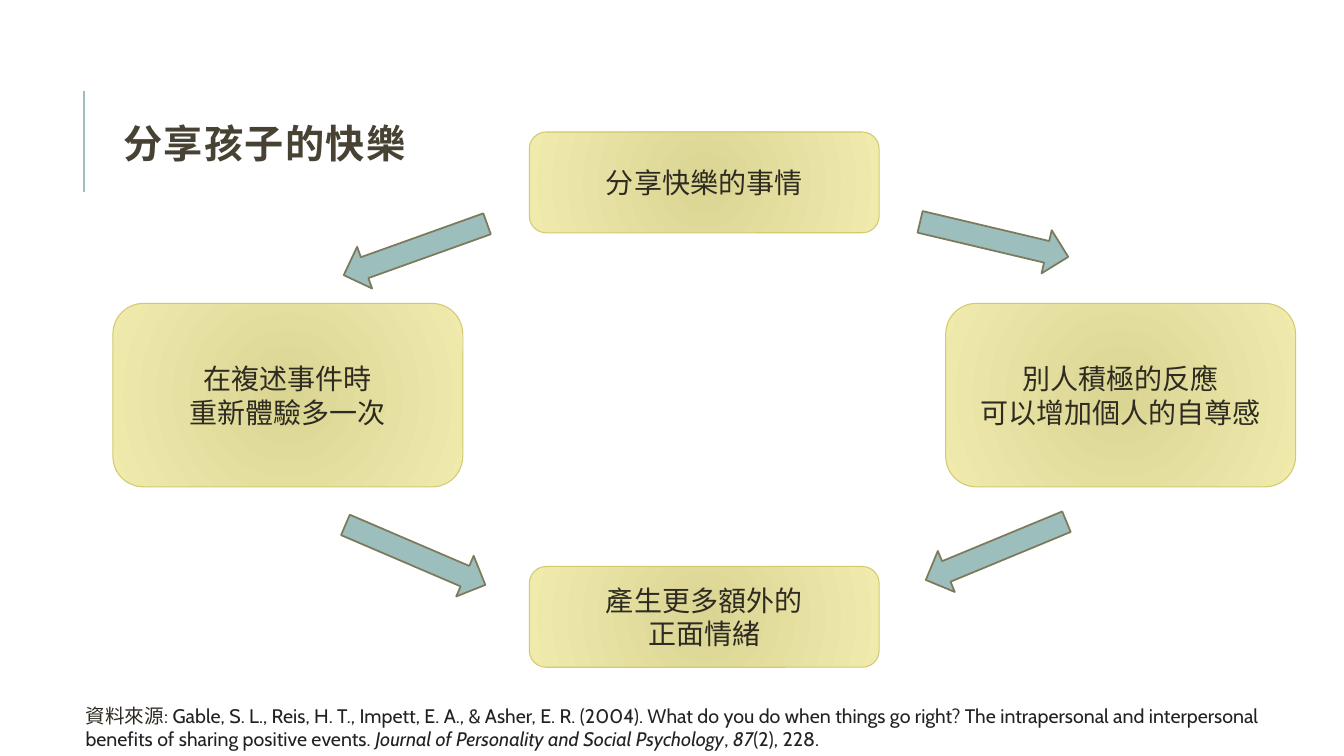
import pptx
import pptx.util
import pptx.dml.color
import pptx.enum.shapes
import pptx.enum.text
import pptx.oxml
import pptx.oxml.ns
import lxml.etree

Inches = pptx.util.Inches
Pt = pptx.util.Pt
MSO_SHAPE = pptx.enum.shapes.MSO_SHAPE
PP_ALIGN = pptx.enum.text.PP_ALIGN
MSO_ANCHOR = pptx.enum.text.MSO_ANCHOR
qn = pptx.oxml.ns.qn

COLORS = {
    "teal": "9CBEBD",
    "arrow_line": "7D7A5C",
    "title": "474233",
    "text": "2E2B21",
    "citation": "222222",
    "box_center": "DBD594",
    "box_edge": "F0EAAD",
    "box_line": "D2CB6C",
}


def rgb(name):
    return pptx.dml.color.RGBColor.from_string(COLORS[name])


def set_font(font, name, size, color):
    font.name = name
    font.size = Pt(size)
    font.color.rgb = rgb(color)


presentation = pptx.Presentation()
presentation.slide_width = Inches(13.33)
presentation.slide_height = Inches(7.5)
slide = presentation.slides.add_slide(presentation.slide_layouts[5])

rule = slide.shapes.add_connector(
    pptx.enum.shapes.MSO_CONNECTOR.STRAIGHT, Inches(0.83), Inches(1.9), Inches(0.83), Inches(0.9)
)
rule.line.color.rgb = rgb("teal")
rule.line.width = Pt(1.5)
lxml.etree.SubElement(rule._element.spPr, qn("a:effectLst"))

title = slide.shapes.title
title.left, title.top = Inches(1.12), Inches(0.64)
title.width, title.height = Inches(10.63), Inches(1.64)
title.text_frame.text = "分享孩子的快樂"
title.text_frame.vertical_anchor = MSO_ANCHOR.MIDDLE
paragraph = title.text_frame.paragraphs[0]
paragraph.alignment = PP_ALIGN.LEFT
paragraph.line_spacing = 0.8
title_font = paragraph.runs[0].font
set_font(title_font, "Calibri", 28, "title")
title_font.bold = True
title_font._element.set("spc", "100")

BOX_WIDTH = 3.47
boxes = [
    (5.25, 1.31, 1, "分享快樂的事情"),
    (1.12, 3.01, 1.82, "在複述事件時\v重新體驗多一次"),
    (9.38, 3.01, 1.82, "別人積極的反應\v可以增加個人的自尊感"),
    (5.25, 5.62, 1, "產生更多額外的\n正面情緒"),
]
for left, top, height, text in boxes:
    box = slide.shapes.add_shape(
        MSO_SHAPE.ROUNDED_RECTANGLE, Inches(left), Inches(top), Inches(BOX_WIDTH), Inches(height)
    )
    box.shadow.inherit = False
    box.fill.gradient()
    for stop, color in zip(box.fill.gradient_stops, ("box_center", "box_edge")):
        stop.color.rgb = rgb(color)
    gradient = box._element.spPr.find(qn("a:gradFill"))
    gradient.remove(gradient.find(qn("a:lin")))
    circle = lxml.etree.SubElement(gradient, qn("a:path"), {"path": "circle"})
    lxml.etree.SubElement(circle, qn("a:fillToRect"), {side: "100000" for side in "ltrb"})
    box.line.color.rgb = rgb("box_line")
    box.line.width = Pt(0.75)
    box.text_frame.text = text
    box.text_frame.word_wrap = True
    box.text_frame.vertical_anchor = MSO_ANCHOR.MIDDLE
    for paragraph in box.text_frame.paragraphs:
        paragraph.alignment = PP_ALIGN.CENTER
        set_font(paragraph.font, "Noto Sans CJK SC", 20, "text")

arrows = [(9.64, 1.62, 283.3), (3.9, 1.72, 70.3), (9.66, 4.71, 67.5), (3.9, 4.75, 293.2)]
for left, top, rotation in arrows:
    arrow = slide.shapes.add_shape(
        MSO_SHAPE.DOWN_ARROW, Inches(left), Inches(top), Inches(0.44), Inches(1.51)
    )
    arrow.rotation = rotation
    arrow.shadow.inherit = False
    arrow.fill.solid()
    arrow.fill.fore_color.rgb = rgb("teal")
    arrow.line.color.rgb = rgb("arrow_line")
    arrow.line.width = Pt(1.25)

source = slide.shapes.add_textbox(Inches(0.75), Inches(6.93), Inches(12.47), Inches(0.57))
source.text_frame.word_wrap = True
source.text_frame.auto_size = pptx.enum.text.MSO_AUTO_SIZE.SHAPE_TO_FIT_TEXT
citation = [
    ("資料來源: ", "text", False),
    (
        "Gable, S. L., Reis, H. T., Impett, E. A., & Asher, E. R. (2004). What do you do when things "
        "go right? The intrapersonal and interpersonal benefits of sharing positive events. ",
        "citation",
        False,
    ),
    ("Journal of Personality and Social Psychology", "citation", True),
    (", ", "citation", False),
    ("87", "citation", True),
    ("(2), 228.", "citation", False),
]
for text, color, italic in citation:
    run = source.text_frame.paragraphs[0].add_run()
    run.text = text
    set_font(run.font, "Cabin", 14, color)
    run.font.italic = italic

presentation.save("out.pptx")
